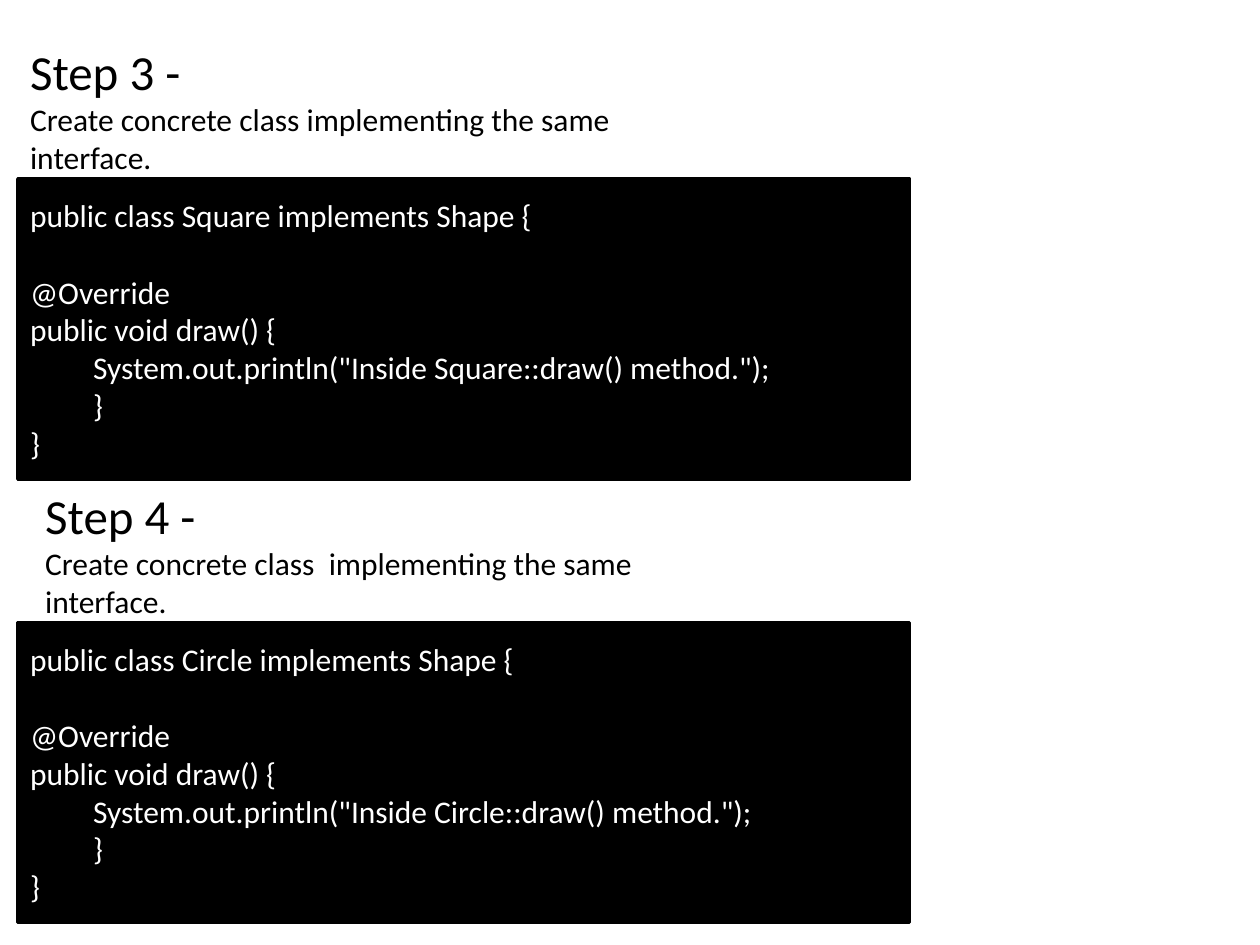
import pptx
import pptx.dml.color
import pptx.enum.shapes
import pptx.enum.text
import pptx.util

Inches = pptx.util.Inches
Pt = pptx.util.Pt

COLOURS = {"ink": "000000", "code_text": "FFFFFF", "code_panel": "000000"}
FONT_NAME = "Calibri"
HEADING_SIZE = Pt(28)
BODY_SIZE = Pt(18)
BLANK_LINE = Pt(22)

# Step number, class name, description, left and top of the step text
STEPS = [
    (3, "Square", "Create concrete class implementing the same interface.", 0.14, 0.28),
    (4, "Circle", "Create concrete class  implementing the same interface.", 0.26, 3.8),
]
PANEL_LEFT = 0.14
PANEL_OFFSET = 1.14


def colour(name):
    return pptx.dml.color.RGBColor.from_string(COLOURS[name])


def write_lines(text_frame, lines, colour_name):
    """Write one paragraph per (text, size, space before) entry."""
    text_frame.word_wrap = True
    for index, (text, size, space_before) in enumerate(lines):
        paragraph = text_frame.paragraphs[0] if index == 0 else text_frame.add_paragraph()
        paragraph.alignment = pptx.enum.text.PP_ALIGN.LEFT
        paragraph.space_before = space_before
        run = paragraph.add_run()
        run.text = text
        for attribute, value in {"name": FONT_NAME, "size": size}.items():
            setattr(run.font, attribute, value)
        run.font.color.rgb = colour(colour_name)


def add_step_text(slide, number, description, left, top):
    shape = slide.shapes.add_textbox(Inches(left), Inches(top), Inches(5.62), Inches(1.78))
    lines = [(f"Step {number} -", HEADING_SIZE, Pt(0)), (description, BODY_SIZE, Pt(0))]
    write_lines(shape.text_frame, lines, "ink")


def add_code_panel(slide, class_name, top):
    shape = slide.shapes.add_shape(
        pptx.enum.shapes.MSO_SHAPE.RECTANGLE,
        Inches(PANEL_LEFT), Inches(top), Inches(7.08), Inches(2.38),
    )
    shape.shadow.inherit = False
    shape.fill.solid()
    shape.fill.fore_color.rgb = colour("code_panel")
    shape.line.color.rgb = colour("code_panel")
    shape.line.width = Pt(2)
    shape.text_frame.vertical_anchor = pptx.enum.text.MSO_ANCHOR.MIDDLE

    code = [
        f"public class {class_name} implements Shape {{",
        "@Override",
        "public void draw() {",
        f'\tSystem.out.println("Inside {class_name}::draw() method.");',
        "\t}",
        "}",
    ]
    # The annotation is set one line apart from the class header
    lines = [(text, BODY_SIZE, BLANK_LINE if text.startswith("@") else Pt(0)) for text in code]
    write_lines(shape.text_frame, lines, "code_text")


def main():
    presentation = pptx.Presentation()
    presentation.slide_width = Inches(10)
    presentation.slide_height = Inches(7.5)
    slide = presentation.slides.add_slide(presentation.slide_layouts.get_by_name("Blank"))

    # Each step is a description followed by its code
    for number, class_name, description, left, top in STEPS:
        add_step_text(slide, number, description, left, top)
        add_code_panel(slide, class_name, top + PANEL_OFFSET)

    presentation.save("out.pptx")


if __name__ == "__main__":
    main()
